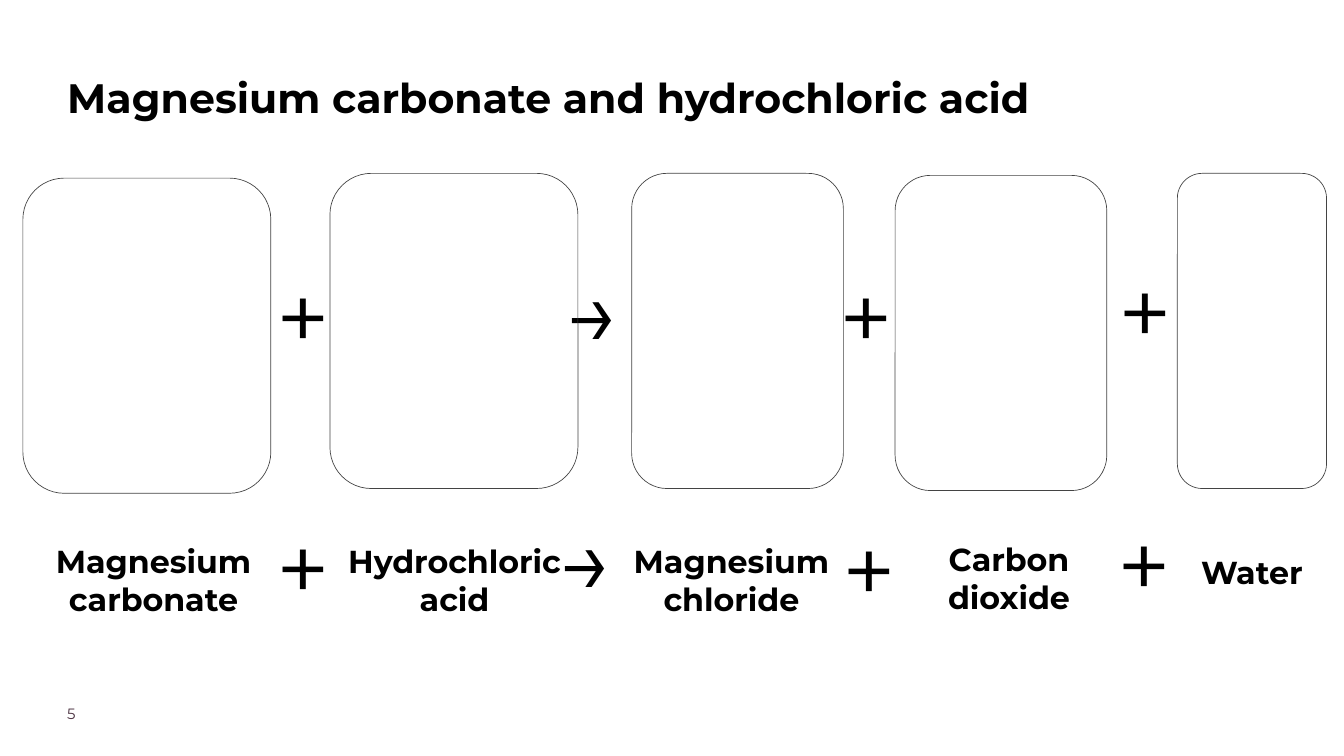
from pptx import Presentation
from pptx.dml.color import RGBColor
from pptx.enum.shapes import MSO_SHAPE as Preset
from pptx.enum.text import MSO_ANCHOR as Anchor, PP_ALIGN as Align
from pptx.util import Inches, Pt

WIDTH, HEIGHT = Inches(20), Inches(11.25)
CARD_HEIGHT, OPERATOR_HEIGHT = 41.69, 10.84
INSET = Inches(0.1)

TITLE = {"size": Pt(44), "bold": True}
PAGE_NUMBER = {"size": Pt(16)}
LABEL = {"size": Pt(34), "bold": True}
OPERATOR = {"size": Pt(100)}

CARDS = [
    (1.7, 23.56, 18.45),
    (24.55, 22.93, 18.45),
    (47, 22.93, 15.75),
    (66.6, 23.2, 15.75),
    (87.6, 22.93, 11.1),
]
LABELS = [
    ("Magnesium carbonate", 2.7, 69.6, 17.45, 14.22),
    ("Hydrochloric acid", 25.1, 69.6, 17.45, 14.22),
    ("Magnesium chloride", 46.55, 69.6, 15.75, 14.22),
    ("Carbon dioxide", 67.2, 69.33, 15.75, 14.22),
    ("Water", 87.6, 69.6, 11.1, 12.18),
]
OPERATORS = [
    ("+", 20.1, 36.18, 4.7),
    ("→ ", 40.8, 35.47, 8.6),
    ("+", 60.15, 36.18, 8.6),
    ("+", 81.65, 35.47, 7.1),
    ("+", 18.3, 69.33, 8.6),
    ("→ ", 40.25, 68.27, 8.6),
    ("+", 61.1, 69.6, 7.1),
    ("+", 80.85, 68.89, 8.6),
]


def color(value):
    return RGBColor.from_string(value)


def share(left, top, width, height):
    return [
        int(WIDTH * left / 100),
        int(HEIGHT * top / 100),
        int(WIDTH * width / 100),
        int(HEIGHT * height / 100),
    ]


def apply(target, values):
    for name, value in values.items():
        setattr(target, name, value)


def add_text(slide, text, area, style, fill="000000", inset=0,
             anchor=Anchor.TOP, align=Align.LEFT):
    frame = slide.shapes.add_textbox(*share(*area)).text_frame
    apply(frame, {"word_wrap": True, "vertical_anchor": anchor})
    apply(frame, {f"margin_{side}": inset
                  for side in ("left", "top", "right", "bottom")})
    paragraph = frame.paragraphs[0]
    paragraph.alignment = align
    run = paragraph.add_run()
    run.text = text
    apply(run.font, {"name": "Montserrat", **style})
    run.font.color.rgb = color(fill)
    return paragraph


def add_centred_text(slide, text, area, style):
    add_text(slide, text, area, style, inset=INSET,
             anchor=Anchor.MIDDLE, align=Align.CENTER)


def add_card(slide, left, top, width):
    area = share(left, top, width, CARD_HEIGHT)
    shape = slide.shapes.add_shape(Preset.ROUNDED_RECTANGLE, *area)
    shape.shadow.inherit = False
    shape.fill.background()
    shape.line.color.rgb = color("434343")
    shape.line.width = Pt(0.75)


def main():
    presentation = Presentation()
    apply(presentation, {"slide_width": WIDTH, "slide_height": HEIGHT})
    slide = presentation.slides.add_slide(presentation.slide_layouts[6])

    title = add_text(slide, "Magnesium carbonate and hydrochloric acid",
                     (5, 8.62, 72.2, 15.82), TITLE)
    title.line_spacing = 1.15
    add_text(slide, "5", (5, 93.16, 7.85, 3.47), PAGE_NUMBER, "4B3241")

    for text, *area in LABELS:
        add_centred_text(slide, text, area, LABEL)
    for text, *place in OPERATORS:
        add_centred_text(slide, text, (*place, OPERATOR_HEIGHT), OPERATOR)
    for card in CARDS:
        add_card(slide, *card)

    presentation.save("out.pptx")


if __name__ == "__main__":
    main()
